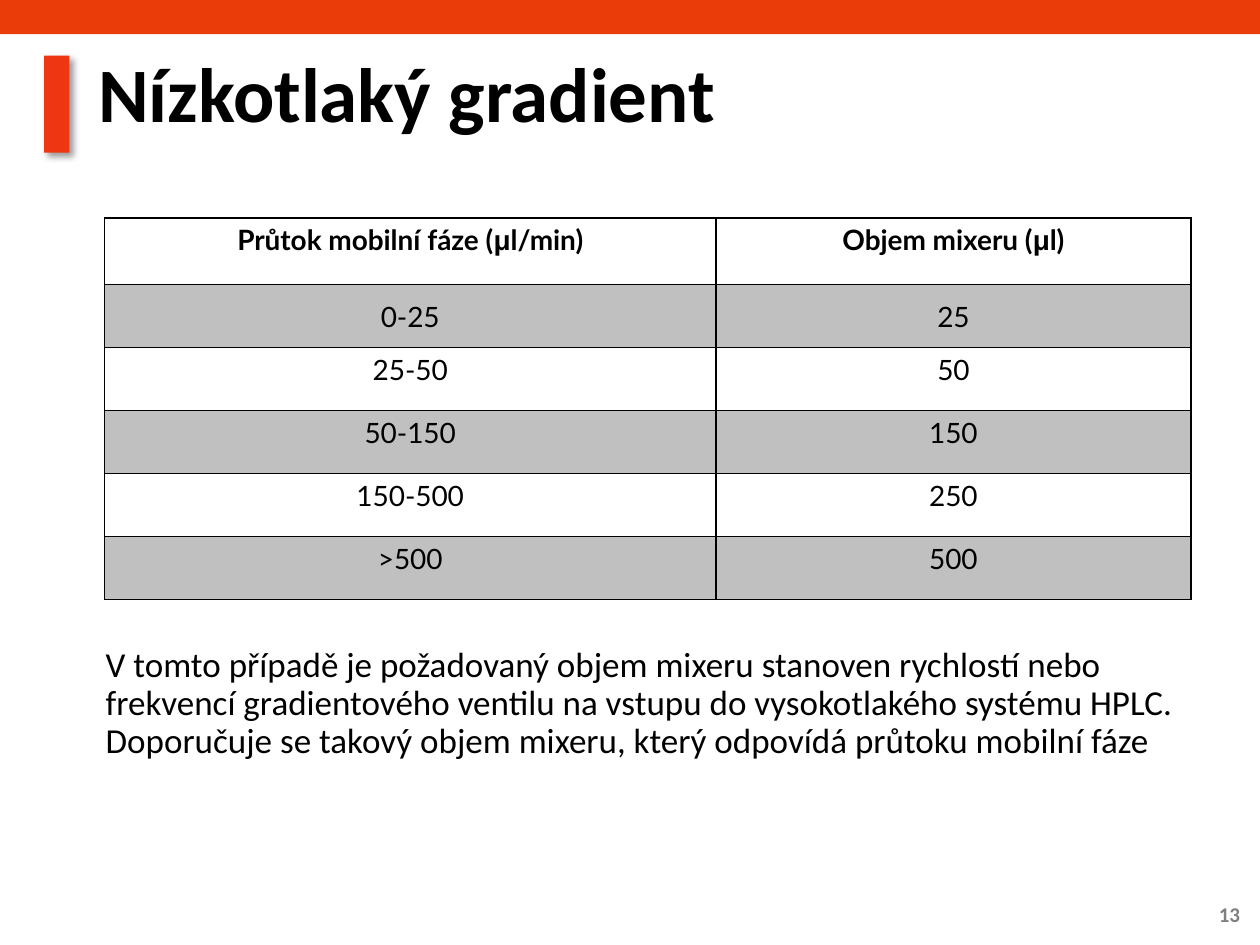
import dataclasses

import lxml.etree
import pptx
import pptx.dml.color
import pptx.enum.shapes
import pptx.enum.text
import pptx.oxml
import pptx.oxml.ns
import pptx.util

Cm = pptx.util.Cm
Pt = pptx.util.Pt
ALIGN = pptx.enum.text.PP_ALIGN
ANCHOR = pptx.enum.text.MSO_ANCHOR


@dataclasses.dataclass(frozen=True)
class Theme:
    text: str = "000000"
    muted: str = "808080"
    paper: str = "FFFFFF"
    band: str = "C0C0C0"
    bar: str = "E93C09"
    accent: str = "EE3712"
    font: str = "Calibri"
    table_font: str = "Lato"
    symbol_font: str = "Arial"
    title_size: int = 44
    body_size: int = 20
    table_size: int = 16
    number_size: int = 12
    line_spacing: float = 0.9
    inset_x: float = 0.23
    inset_y: float = 0.1


class SlideBuilder:
    """Draws styled elements on the current slide."""

    def __init__(self, slide, theme):
        self.slide = slide
        self.theme = theme

    def paint(self, fill, color):
        fill.solid()
        fill.fore_color.rgb = pptx.dml.color.RGBColor.from_string(color)

    def format_run(self, run, font, size, color, bold=False):
        run.font.name = font
        run.font.size = Pt(size)
        run.font.bold = bold
        run.font.color.rgb = pptx.dml.color.RGBColor.from_string(color)

    def fill_frame(self, shape, text, size, color, bold=False, align=ALIGN.LEFT,
                   anchor=ANCHOR.TOP, line_spacing=None):
        frame = shape.text_frame
        frame.text = text
        frame.word_wrap = True
        frame.auto_size = pptx.enum.text.MSO_AUTO_SIZE.NONE
        frame.vertical_anchor = anchor
        frame.margin_left = frame.margin_right = Cm(self.theme.inset_x)
        frame.margin_top = frame.margin_bottom = Cm(self.theme.inset_y)
        paragraph = frame.paragraphs[0]
        paragraph.alignment = align
        paragraph.line_spacing = line_spacing
        paragraph.space_before = Pt(0)
        self.format_run(paragraph.runs[0], self.theme.font, size, color, bold)

    def rectangle(self, left, top, width, height, color):
        shape = self.slide.shapes.add_shape(
            pptx.enum.shapes.MSO_SHAPE.RECTANGLE,
            Cm(left), Cm(top), Cm(width), Cm(height))
        self.paint(shape.fill, color)
        shape.line.fill.background()
        shape.shadow.inherit = False
        return shape

    def cast_shadow(self, shape):
        effects = shape._element.spPr.find(pptx.oxml.ns.qn("a:effectLst"))
        effects.append(pptx.oxml.parse_xml(
            f'<a:outerShdw {pptx.oxml.ns.nsdecls("a")} blurRad="{Pt(4)}" dist="{Pt(3)}" '
            'dir="2700000" algn="tl" rotWithShape="0"><a:srgbClr val="000000">'
            '<a:alpha val="40000"/></a:srgbClr></a:outerShdw>'))

    def title(self, text, left, top, width, height):
        shape = self.slide.shapes.title
        shape.left, shape.top = Cm(left), Cm(top)
        shape.width, shape.height = Cm(width), Cm(height)
        self.paint(shape.fill, self.theme.paper)
        self.fill_frame(shape, text, self.theme.title_size, self.theme.text, bold=True,
                        line_spacing=self.theme.line_spacing)

    def text(self, text, left, top, width, height, size, color, **style):
        shape = self.slide.shapes.add_textbox(Cm(left), Cm(top), Cm(width), Cm(height))
        self.fill_frame(shape, text, size, color, **style)

    def border(self, cell):
        properties = cell._tc.get_or_add_tcPr()
        for index, side in enumerate(("lnL", "lnR", "lnT", "lnB")):
            line = lxml.etree.Element(pptx.oxml.ns.qn(f"a:{side}"), w=str(Pt(1)))
            fill = lxml.etree.SubElement(line, pptx.oxml.ns.qn("a:solidFill"))
            lxml.etree.SubElement(fill, pptx.oxml.ns.qn("a:srgbClr"), val=self.theme.text)
            properties.insert(index, line)

    def cell(self, cell, text, bold, banded, anchor):
        cell.margin_left = cell.margin_right = Cm(self.theme.inset_x)
        cell.margin_top = cell.margin_bottom = Cm(self.theme.inset_y)
        cell.vertical_anchor = anchor
        if banded:
            self.paint(cell.fill, self.theme.band)
        else:
            cell.fill.background()
        self.border(cell)
        paragraph = cell.text_frame.paragraphs[0]
        paragraph.alignment = ALIGN.CENTER
        for part in filter(None, text.partition("μ")):
            run = paragraph.add_run()
            run.text = part
            font = self.theme.symbol_font if part == "μ" else self.theme.table_font
            self.format_run(run, font, self.theme.table_size, self.theme.text, bold)

    def table(self, rows, left, top, widths, header_height, row_height):
        height = header_height + row_height * (len(rows) - 1)
        table = self.slide.shapes.add_table(
            len(rows), len(widths), Cm(left), Cm(top), Cm(sum(widths)), Cm(height)).table
        table.first_row = table.horz_banding = False
        for column, width in zip(table.columns, widths):
            column.width = Cm(width)
        for index, values in enumerate(rows):
            table.rows[index].height = Cm(row_height if index else header_height)
            anchor = ANCHOR.MIDDLE if index == 1 else ANCHOR.TOP
            for column, value in enumerate(values):
                self.cell(table.cell(index, column), value, index == 0, index % 2 == 1, anchor)


def main():
    theme = Theme()
    presentation = pptx.Presentation()
    presentation.slide_width, presentation.slide_height = Cm(25.4), Cm(19.05)
    slide = presentation.slides.add_slide(presentation.slide_layouts[5])
    builder = SlideBuilder(slide, theme)

    builder.rectangle(0, 0, 25.4, 0.69, theme.bar)
    builder.cast_shadow(builder.rectangle(0.89, 1.12, 0.51, 1.96, theme.accent))
    builder.text("13", 23.5, 17.91, 1.73, 1.02, theme.number_size, theme.muted,
                 bold=True, align=ALIGN.RIGHT, anchor=ANCHOR.MIDDLE)
    builder.title("Nízkotlaký gradient", 1.75, 1.02, 22.99, 2.49)
    builder.text(
        "V tomto případě je požadovaný objem mixeru stanoven rychlostí nebo "
        "frekvencí gradientového ventilu na vstupu do vysokotlakého systému HPLC. "
        "Doporučuje se takový objem mixeru, který odpovídá průtoku mobilní fáze",
        1.9, 12.95, 22.99, 2.82, theme.body_size, theme.text,
        line_spacing=theme.line_spacing)
    rows = [
        ("Průtok mobilní fáze (μl/min)", "Objem mixeru (μl)"),
        ("0-25", "25"),
        ("25-50", "50"),
        ("50-150", "150"),
        ("150-500", "250"),
        (">500", "500"),
    ]
    builder.table(rows, 2.11, 4.39, (12.32, 9.58), header_height=1.35, row_height=1.27)
    presentation.save("out.pptx")


if __name__ == "__main__":
    main()
